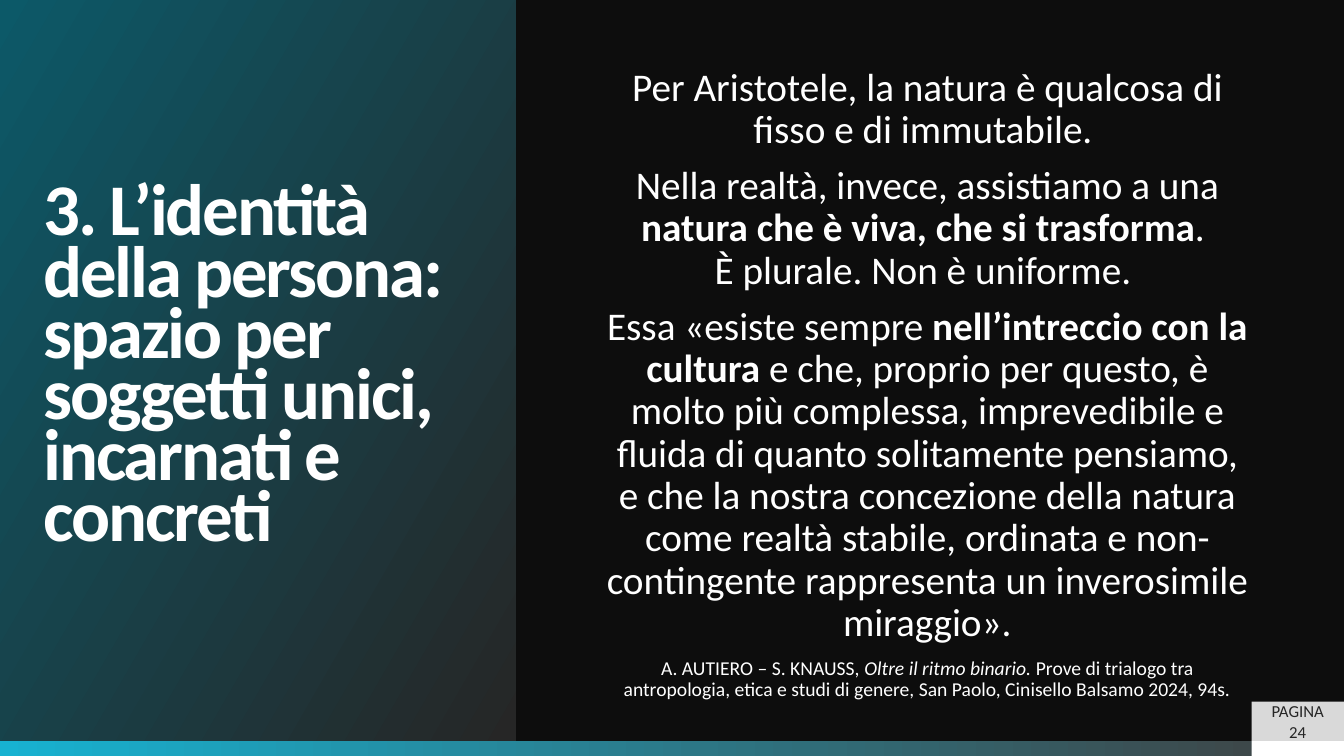
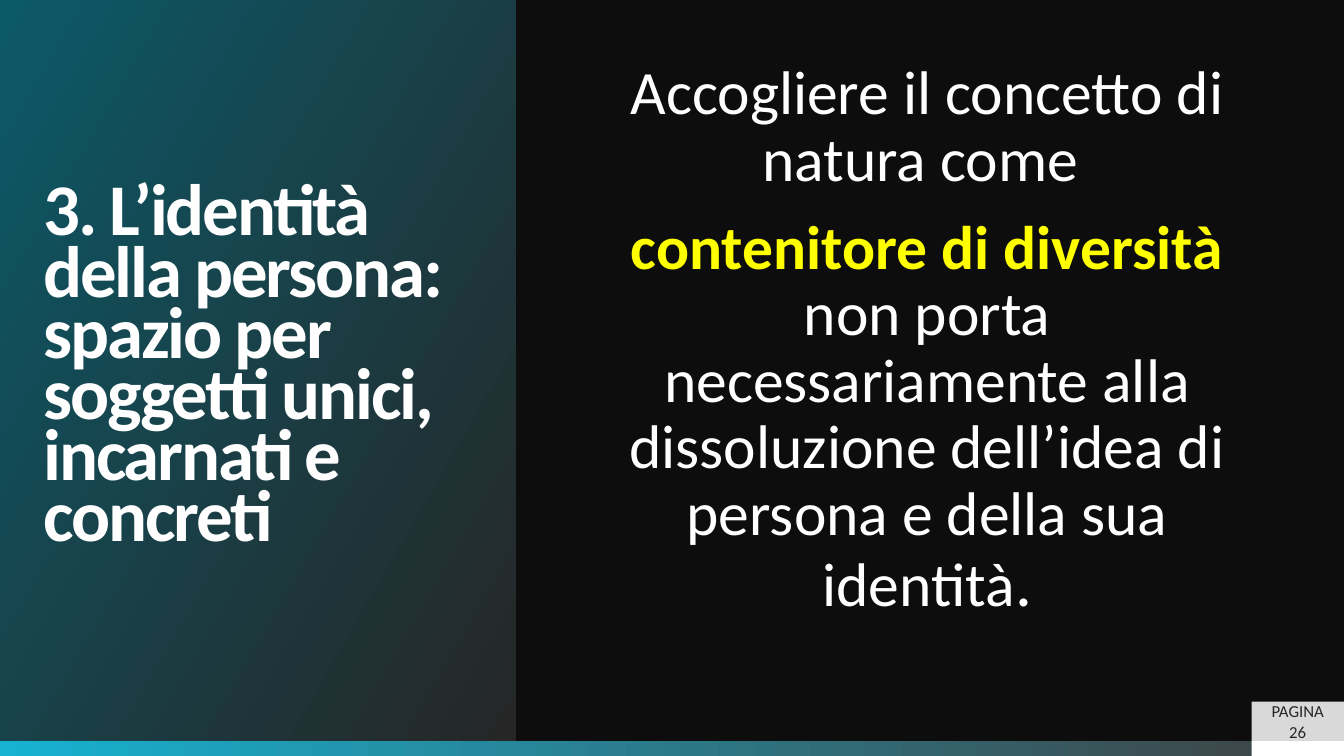
from pptx import Presentation
from pptx.dml.color import RGBColor
from pptx.enum.shapes import MSO_SHAPE as Shape
from pptx.enum.text import MSO_ANCHOR as Anchor, PP_ALIGN as Align
from pptx.util import Pt

# Palette and type
FONT = "Calibri"
BLACK = RGBColor(0x0D, 0x0D, 0x0D)
WHITE = RGBColor(0xFF, 0xFF, 0xFF)
YELLOW = RGBColor(0xFF, 0xFF, 0x00)
CYAN = RGBColor(0x17, 0xB2, 0xD1)
TEAL = RGBColor(0x0C, 0x59, 0x68)
GRAPHITE = RGBColor(0x40, 0x40, 0x40)
CHARCOAL = RGBColor(0x26, 0x26, 0x26)
SILVER = RGBColor(0xD9, 0xD9, 0xD9)

# Page grid in points
PAGE_W, PAGE_H = 960, 540
BAND_H = 10.8
BAND_TOP = PAGE_H - BAND_H
PANEL_W = 368.6
BADGE_W, BADGE_H = 66, 28
BADGE_LEFT = PAGE_W - BADGE_W
BODY_LEFT, BODY_W, BODY_BOTTOM = 417.6, 489.6, 510

TITLE = "3. L’identità della persona: \nspazio per soggetti unici, incarnati e concreti"


def write(paragraph, text, *, size, color=WHITE, bold=False, italic=False, tracking=0):
    """Add formatted text to a paragraph; a newline becomes a line break."""
    for index, line in enumerate(text.split("\n")):
        if index:
            paragraph.add_line_break()
        run = paragraph.add_run()
        run.text = line
        font = run.font
        font.name, font.size, font.bold, font.italic = FONT, Pt(size), bold, italic
        font.color.rgb = color
        if tracking:
            font._element.set("spc", str(round(tracking * 100)))


class Deck:
    def __init__(self):
        self.prs = Presentation()
        self.prs.slide_width, self.prs.slide_height = Pt(PAGE_W), Pt(PAGE_H)
        self.slide = None

    def block(self, left, top, width, height, *colors, angle=0):
        """Rectangle with one plain colour or a gradient between two."""
        block = self.slide.shapes.add_shape(
            Shape.RECTANGLE, Pt(left), Pt(top), Pt(width), Pt(height))
        block.shadow.inherit = False
        block.line.fill.background()
        if len(colors) == 1:
            block.fill.solid()
            block.fill.fore_color.rgb = colors[0]
        else:
            block.fill.gradient()
            block.fill.gradient_angle = angle
            for stop, color, position in zip(block.fill.gradient_stops, colors, (0, 1)):
                stop.color.rgb, stop.position = color, position
        return block

    def frame(self, shape, anchor, inset_x, inset_y):
        frame = shape.text_frame
        frame.word_wrap = True
        frame.vertical_anchor = anchor
        frame.margin_left = frame.margin_right = Pt(inset_x)
        frame.margin_top = frame.margin_bottom = Pt(inset_y)
        return frame

    def page(self, number):
        """Start a slide with its background, bands, title and page badge."""
        self.slide = self.prs.slides.add_slide(self.prs.slide_layouts[6])
        background = self.slide.background.fill
        background.solid()
        background.fore_color.rgb = BLACK

        # Bottom band
        self.block(0, BAND_TOP, PAGE_W, BAND_H, CYAN, GRAPHITE)
        self.block(BADGE_LEFT, BAND_TOP, BADGE_W, BAND_H, WHITE)

        # Title panel
        panel = self.block(0, 0, PANEL_W, BAND_TOP, CHARCOAL, TEAL, angle=150)
        title = self.frame(panel, Anchor.MIDDLE, 31, 3.6).paragraphs[0]
        title.alignment, title.line_spacing = Align.LEFT, 0.7
        write(title, TITLE, size=52, bold=True, tracking=-1.5)

        # Page badge
        badge = self.block(BADGE_LEFT, BAND_TOP - BADGE_H, BADGE_W, BADGE_H, SILVER)
        label = self.frame(badge, Anchor.MIDDLE, 7.2, 3.6).paragraphs[0]
        label.alignment = Align.CENTER
        write(label, f"PAGINA {number}", size=12, color=CHARCOAL)

    def body(self, paragraphs, *, top, size):
        """Centred paragraphs, each a list of (text, format) pairs."""
        box = self.slide.shapes.add_textbox(
            Pt(BODY_LEFT), Pt(top), Pt(BODY_W), Pt(BODY_BOTTOM - top))
        frame = self.frame(box, Anchor.TOP, 15, 0)
        for index, parts in enumerate(paragraphs):
            paragraph = frame.add_paragraph() if index else frame.paragraphs[0]
            paragraph.alignment, paragraph.line_spacing = Align.CENTER, 0.9
            paragraph.space_after = Pt(round(size * 0.35, 1))
            for text, style in parts:
                write(paragraph, text, **{"size": size, **style})


def main():
    deck = Deck()
    plain, strong, source = {}, {"bold": True}, {"size": 14}

    # Nature according to Aristotle
    deck.page(24)
    deck.body([
        [("Per Aristotele, la natura è qualcosa di fisso e di immutabile. ", plain)],
        [("Nella realtà, invece, assistiamo a una ", plain),
         ("natura che è viva, che si trasforma", strong),
         (". \nÈ plurale. Non è uniforme. ", plain)],
        [("Essa «esiste sempre ", plain),
         ("nell’intreccio con la cultura ", strong),
         ("e che, proprio per questo, è molto più complessa, imprevedibile e fluida "
          "di quanto solitamente pensiamo, e che la nostra concezione della natura "
          "come realtà stabile, ordinata e non-contingente rappresenta un "
          "inverosimile miraggio».", plain)],
        [("A. AUTIERO – S. KNAUSS, ", source),
         ("Oltre il ritmo binario. ", {**source, "italic": True}),
         ("Prove di trialogo tra antropologia, etica e studi di genere, San Paolo, "
          "Cinisello Balsamo 2024, 94s.", source)],
    ], top=48, size=28)

    # Nature as a container of diversity
    deck.page(26)
    deck.body([
        [("Accogliere il concetto di natura come ", plain)],
        [("contenitore di diversità ", {**strong, "color": YELLOW}),
         ("non porta necessariamente alla dissoluzione dell’idea di persona e della "
          "sua identità", plain),
         (".", {"size": 48})],
    ], top=44, size=44)

    deck.prs.save("out.pptx")


if __name__ == "__main__":
    main()
